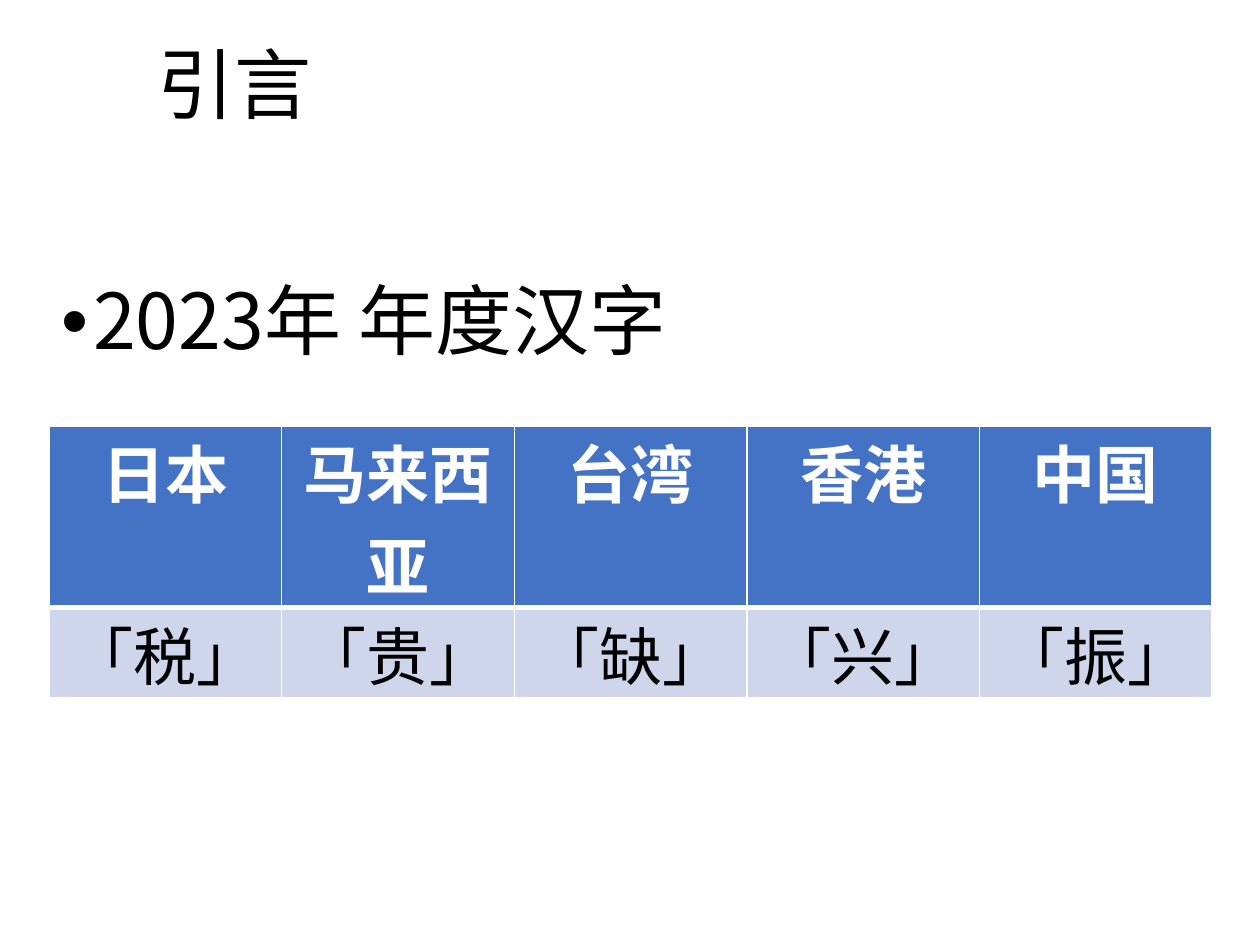
from dataclasses import dataclass

from lxml import etree
from pptx import Presentation
from pptx.dml.color import RGBColor
from pptx.enum.text import MSO_ANCHOR, PP_ALIGN
from pptx.oxml.ns import qn
from pptx.util import Inches, Pt

CENTER = PP_ALIGN.CENTER
TOP = MSO_ANCHOR.TOP
MIDDLE = MSO_ANCHOR.MIDDLE


@dataclass(frozen=True)
class Theme:
    ink: str = "000000"
    white: str = "FFFFFF"
    header: str = "4472C4"
    band: str = "CFD5EA"
    sans: str = "Noto Sans CJK SC"
    serif: str = "Times New Roman"
    heading_size: int = 44
    cell_size: int = 36
    thin: int = 1
    thick: int = 3


THEME = Theme()
KANJI_OF_YEAR = {
    "日本": "「税」",
    "马来西亚": "「贵」",
    "台湾": "「缺」",
    "香港": "「兴」",
    "中国": "「振」",
}


def style_paragraph(para, latin, size, color, bold=False):
    font = para.font
    font.name = latin
    font.size = Pt(size)
    font.bold = bold
    font.color.rgb = RGBColor.from_string(color)
    defaults = para._p.pPr.find(qn("a:defRPr"))
    etree.SubElement(defaults, qn("a:ea"), typeface=THEME.sans)


def add_bullet(para, indent):
    properties = para._p.get_or_add_pPr()
    properties.set("marL", str(indent))
    properties.set("indent", str(-indent))
    etree.SubElement(properties, qn("a:buFont"), typeface="Arial")
    etree.SubElement(properties, qn("a:buChar"), char="•")


def add_heading(page, text, left, top, width, height, anchor, bulleted=False):
    box = page.shapes.add_textbox(left, top, width, height)
    frame = box.text_frame
    frame.word_wrap = True
    frame.vertical_anchor = anchor
    para = frame.paragraphs[0]
    para.text = text
    para.line_spacing = 0.9
    if bulleted:
        add_bullet(para, Inches(0.25))
    style_paragraph(para, THEME.sans, THEME.heading_size, THEME.ink)


def add_border(cell, side, width):
    line = etree.SubElement(
        cell._tc.get_or_add_tcPr(), qn(f"a:ln{side}"), w=str(Pt(width))
    )
    fill = etree.SubElement(line, qn("a:solidFill"))
    etree.SubElement(fill, qn("a:srgbClr"), val=THEME.white)


def fill_cell(cell, text, is_header):
    cell.margin_left = cell.margin_right = Inches(0.07)
    cell.margin_top = cell.margin_bottom = 0
    thick_side = "B" if is_header else "T"
    for side in "LRTB":
        add_border(cell, side, THEME.thick if side == thick_side else THEME.thin)
    cell.fill.solid()
    cell.fill.fore_color.rgb = RGBColor.from_string(
        THEME.header if is_header else THEME.band
    )
    para = cell.text_frame.paragraphs[0]
    para.text = text
    para.alignment = CENTER
    color = THEME.white if is_header else THEME.ink
    style_paragraph(para, THEME.serif, THEME.cell_size, color, is_header)


def add_kanji_table(page, left, top, width, row_heights):
    rows = [KANJI_OF_YEAR.keys(), KANJI_OF_YEAR.values()]
    table = page.shapes.add_table(
        len(rows), len(KANJI_OF_YEAR), left, top, width, sum(row_heights)
    ).table
    for row_index, (texts, height) in enumerate(zip(rows, row_heights)):
        table.rows[row_index].height = height
        for column_index, text in enumerate(texts):
            fill_cell(table.cell(row_index, column_index), text, row_index == 0)


def main():
    deck = Presentation()
    deck.slide_width = Inches(10)
    deck.slide_height = Inches(7.5)
    page = deck.slides.add_slide(deck.slide_layouts[6])
    left, width = Inches(0.39), Inches(9.23)
    add_heading(page, "2023年 年度汉字", left, Inches(2.2), width, Inches(4.59),
                TOP, bulleted=True)
    add_kanji_table(page, left, Inches(3.38), width, [Inches(1.44), Inches(0.72)])
    add_heading(page, "引言", Inches(1.15), Inches(0.28), Inches(7.19),
                Inches(0.85), MIDDLE)
    deck.save("out.pptx")


if __name__ == "__main__":
    main()
